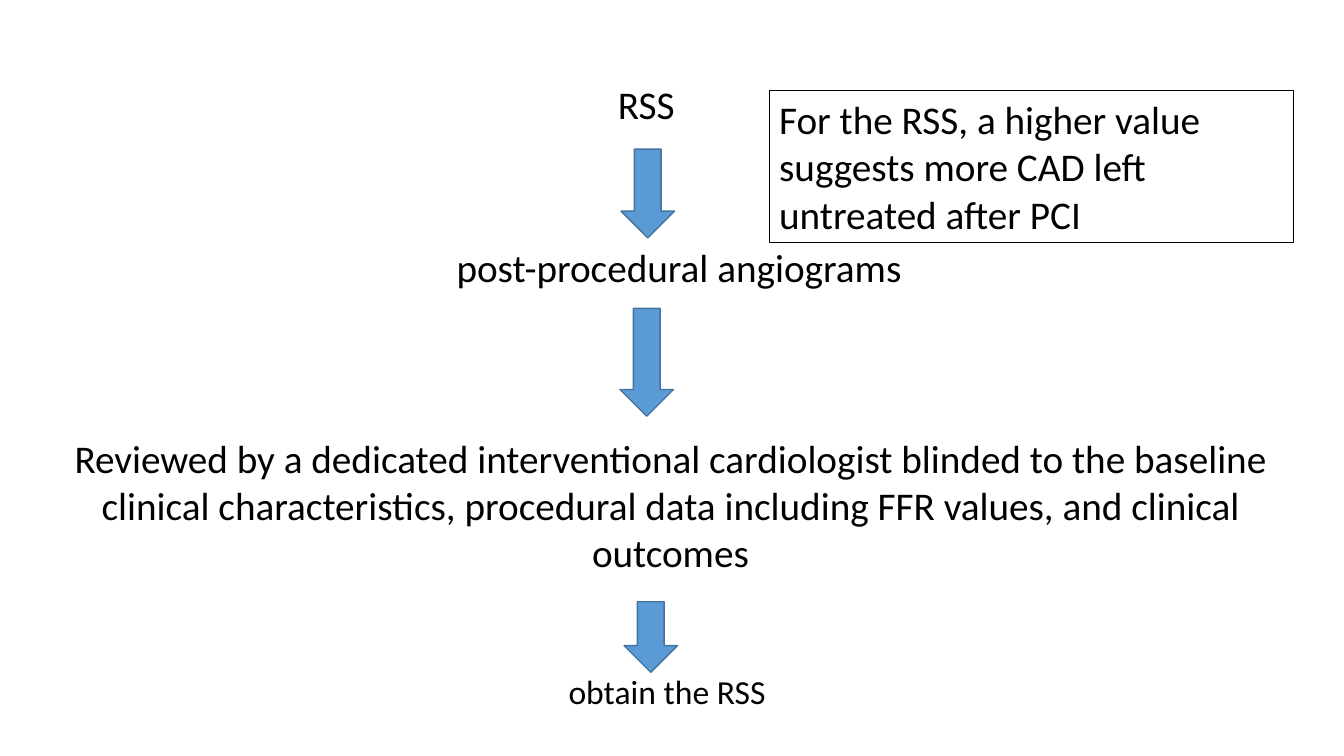
from pptx import Presentation
from pptx.util import Inches, Pt
from pptx.dml.color import RGBColor as RGB
from pptx.enum.shapes import MSO_SHAPE as Kind
from pptx.enum.text import MSO_AUTO_SIZE as Fit, MSO_ANCHOR as Anchor, PP_ALIGN as Align

COLORS = {"ink": "000000", "arrow": "5B9BD5", "edge": "43739E"}


def color(name):
    return RGB.from_string(COLORS[name])


def write(shape, text, size=28, wrap=False, align=Align.LEFT):
    frame = shape.text_frame
    frame.word_wrap = wrap
    frame.auto_size = Fit.SHAPE_TO_FIT_TEXT
    frame.vertical_anchor = Anchor.TOP
    para = frame.paragraphs[0]
    para.alignment = align
    run = para.add_run()
    run.text = text
    run.font.name = "Calibri"
    run.font.size = Pt(size)
    run.font.color.rgb = color("ink")


deck = Presentation()
deck.slide_width = Inches(13.33)
deck.slide_height = Inches(7.5)
slide = deck.slides.add_slide(deck.slide_layouts[6])
shapes = slide.shapes

review = (
    "Reviewed by a dedicated interventional cardiologist blinded to the baseline "
    "clinical characteristics, procedural data including FFR values, and clinical outcomes"
)
steps = [
    (6.03, 0.75, 0.77, 0.57, "RSS", 28, False, Align.LEFT),
    (4.43, 2.36, 4.76, 0.57, "post-procedural angiograms", 28, False, Align.LEFT),
    (0.18, 4.26, 12.94, 1.51, review, 28, True, Align.CENTER),
    (5.54, 6.61, 2.32, 0.5, "obtain the RSS", 24, False, Align.LEFT),
]
for left, top, width, height, text, size, wrap, align in steps:
    box = shapes.add_textbox(Inches(left), Inches(top), Inches(width), Inches(height))
    write(box, text, size, wrap, align)

for left, top, height in [(6.16, 1.48, 0.88), (6.15, 3.06, 1.07), (6.19, 5.97, 0.7)]:
    arrow = shapes.add_shape(
        Kind.DOWN_ARROW, Inches(left), Inches(top), Inches(0.53), Inches(height)
    )
    arrow.shadow.inherit = False
    arrow.fill.solid()
    arrow.fill.fore_color.rgb = color("arrow")
    arrow.line.color.rgb = color("edge")
    arrow.line.width = Pt(1)

note = shapes.add_shape(Kind.RECTANGLE, Inches(7.63), Inches(0.9), Inches(5.2), Inches(1.51))
note.shadow.inherit = False
note.fill.background()
note.line.color.rgb = color("ink")
note.line.width = Pt(0.75)
write(note, "For the RSS, a higher value suggests more CAD left untreated after PCI", wrap=True)

deck.save("out.pptx")
